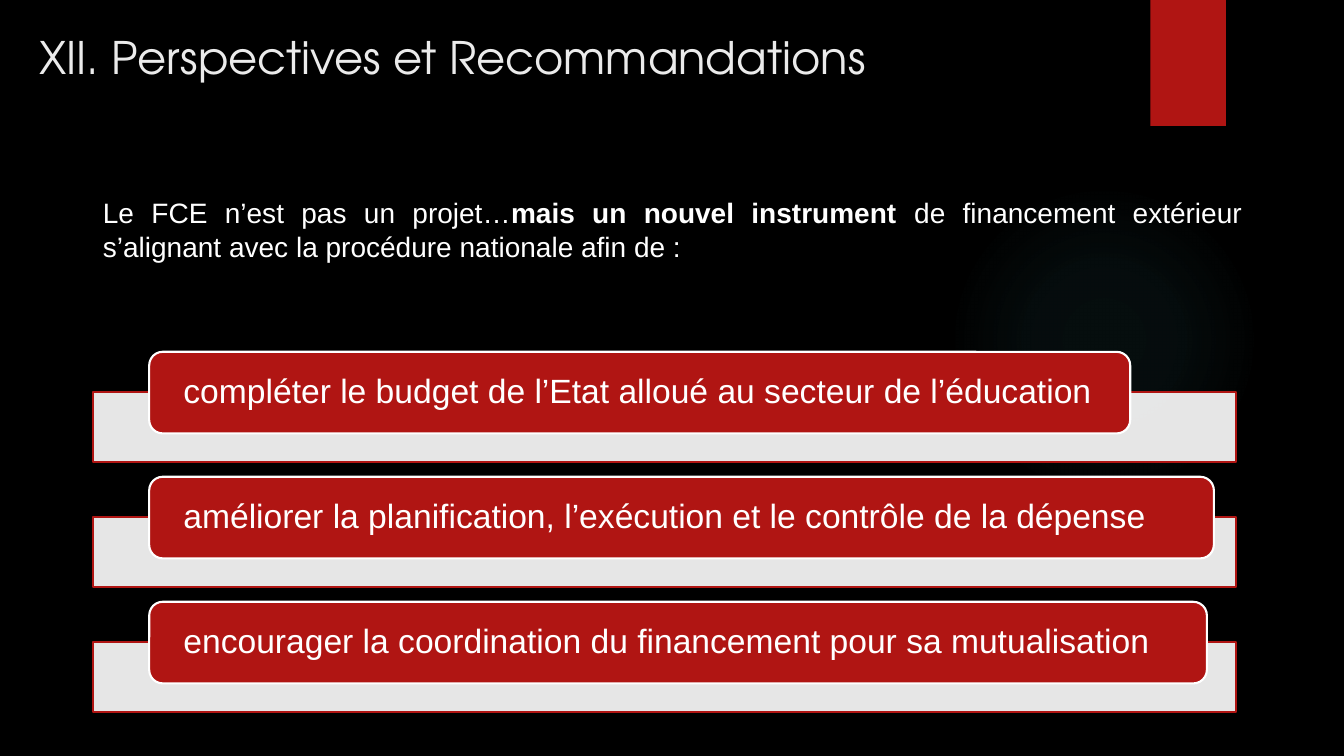
from lxml import etree
from pptx import Presentation
from pptx.dml.color import RGBColor
from pptx.enum.shapes import MSO_SHAPE
from pptx.enum.text import MSO_ANCHOR, MSO_AUTO_SIZE, PP_ALIGN
from pptx.oxml import parse_xml
from pptx.oxml.ns import nsdecls, qn
from pptx.util import Inches, Pt

BLACK = RGBColor(0x00, 0x00, 0x00)
WHITE = RGBColor(0xFF, 0xFF, 0xFF)
RED = RGBColor(0xB0, 0x15, 0x13)
PALE = RGBColor(0xEB, 0xEB, 0xEB)
TEAL = RGBColor(0x50, 0xB9, 0xC1)

INTRO = [
    ("Le FCE n’est pas un projet…", False),
    ("mais un nouvel instrument ", True),
    ("de financement extérieur s’alignant avec la procédure nationale afin de :", False),
]
# Goal and width of its label
GOALS = [
    ("compléter le budget de l’Etat alloué au secteur de l’éducation", 9.73),
    ("améliorer la planification, l’exécution et le contrôle de la dépense", 10.56),
    ("encourager la coordination du financement pour sa mutualisation", 10.49),
]


def format_font(font, **values):
    color = values.pop("color")
    for name, value in values.items():
        setattr(font, name, value)
    font.color.rgb = color


def add_block(slide, kind, box, fill, line=None):
    block = slide.shapes.add_shape(kind, *map(Inches, box))
    block.shadow.inherit = False
    block.fill.solid()
    block.fill.fore_color.rgb = fill
    if line is None:
        block.line.fill.background()
    else:
        block.line.color.rgb = line
        block.line.width = Pt(1.5)
    return block


def place(placeholder, box):
    placeholder.left, placeholder.top, placeholder.width, placeholder.height = map(Inches, box)
    frame = placeholder.text_frame
    settings = {"word_wrap": True, "auto_size": MSO_AUTO_SIZE.NONE,
                "vertical_anchor": MSO_ANCHOR.TOP}
    for name, value in settings.items():
        setattr(frame, name, value)
    return frame.paragraphs[0]


def add_backdrop(slide, glow_box, ribbon_box):
    slide.background.fill.solid()
    slide.background.fill.fore_color.rgb = BLACK
    glow = add_block(slide, MSO_SHAPE.OVAL, glow_box, TEAL)
    ribbon = add_block(slide, MSO_SHAPE.RECTANGLE, ribbon_box, RED)

    # Radial fade from the centre of the glow
    stops = "".join(
        f'<a:gs pos="{pos * 1000}"><a:srgbClr val="{TEAL}">'
        f'<a:alpha val="{alpha * 1000}"/></a:srgbClr></a:gs>'
        for pos, alpha in [(0, 7), (36, 6), (69, 0), (100, 0)])
    fade = parse_xml(
        f'<a:gradFill {nsdecls("a")} rotWithShape="1"><a:gsLst>{stops}</a:gsLst>'
        '<a:path path="circle"><a:fillToRect l="50000" t="50000" r="50000" b="50000"/>'
        '</a:path></a:gradFill>')
    solid = glow._element.spPr.find(qn("a:solidFill"))
    solid.getparent().replace(solid, fade)

    # Decoration sits behind the title
    for part in (glow, ribbon):
        slide.shapes.title._element.addprevious(part._element)


def add_title(slide, box):
    heading = place(slide.shapes.title, box)
    heading.alignment = PP_ALIGN.LEFT
    run = heading.add_run()
    run.text = "XII. Perspectives et Recommandations"
    format_font(run.font, name="TeX Gyre Adventor", size=Pt(32), color=PALE)


def add_intro(slide, box):
    intro = place(slide.placeholders[1], box)
    properties = intro._p.get_or_add_pPr()
    properties.set("marL", "0")
    properties.set("indent", "0")
    etree.SubElement(properties, qn("a:buNone"))
    intro.alignment = PP_ALIGN.JUSTIFY
    intro.space_before = Pt(0)
    for text, bold in INTRO:
        run = intro.add_run()
        run.text = text
        format_font(run.font, name="Arial", size=Pt(20), bold=bold, color=WHITE)


def add_goal(slide, box, text, label_width):
    left, top, width, height = box
    bar_height = 0.69
    bar = add_block(slide, MSO_SHAPE.RECTANGLE,
                    (left, top + height - bar_height, width, bar_height), WHITE, RED)
    color = bar._element.spPr.find(qn("a:solidFill"))[0]
    etree.SubElement(color, qn("a:alpha")).set("val", "90000")

    label = add_block(slide, MSO_SHAPE.ROUNDED_RECTANGLE,
                      (left + 0.56, top, label_width, 0.81), RED, WHITE)
    frame = label.text_frame
    settings = {"margin_left": Inches(0.3), "margin_right": Inches(0.2),
                "margin_top": 0, "margin_bottom": 0,
                "word_wrap": True, "vertical_anchor": MSO_ANCHOR.MIDDLE}
    for name, value in settings.items():
        setattr(frame, name, value)
    goal = frame.paragraphs[0]
    goal.alignment = PP_ALIGN.LEFT
    goal.line_spacing = 0.9
    run = goal.add_run()
    run.text = text
    format_font(run.font, name="Arial", size=Pt(24), color=WHITE)


def add_goals(slide, box):
    left, top, width, height = box
    goal_height = 1.09
    step = (height - goal_height) / (len(GOALS) - 1)
    for index, (text, label_width) in enumerate(GOALS):
        add_goal(slide, (left, top + index * step, width, goal_height), text, label_width)


def main():
    presentation = Presentation()
    presentation.slide_width = Inches(13.33)
    presentation.slide_height = Inches(7.5)
    slide = presentation.slides.add_slide(presentation.slide_layouts[1])
    add_backdrop(slide, (9.41, 1.83, 3.08, 3.08), (11.41, 0, 0.75, 1.25))
    add_title(slide, (0.29, 0.24, 11.69, 1.45))
    add_intro(slide, (0.92, 1.89, 11.5, 4.76))
    add_goals(slide, (0.92, 3.49, 11.34, 3.57))
    presentation.save("out.pptx")


if __name__ == "__main__":
    main()
